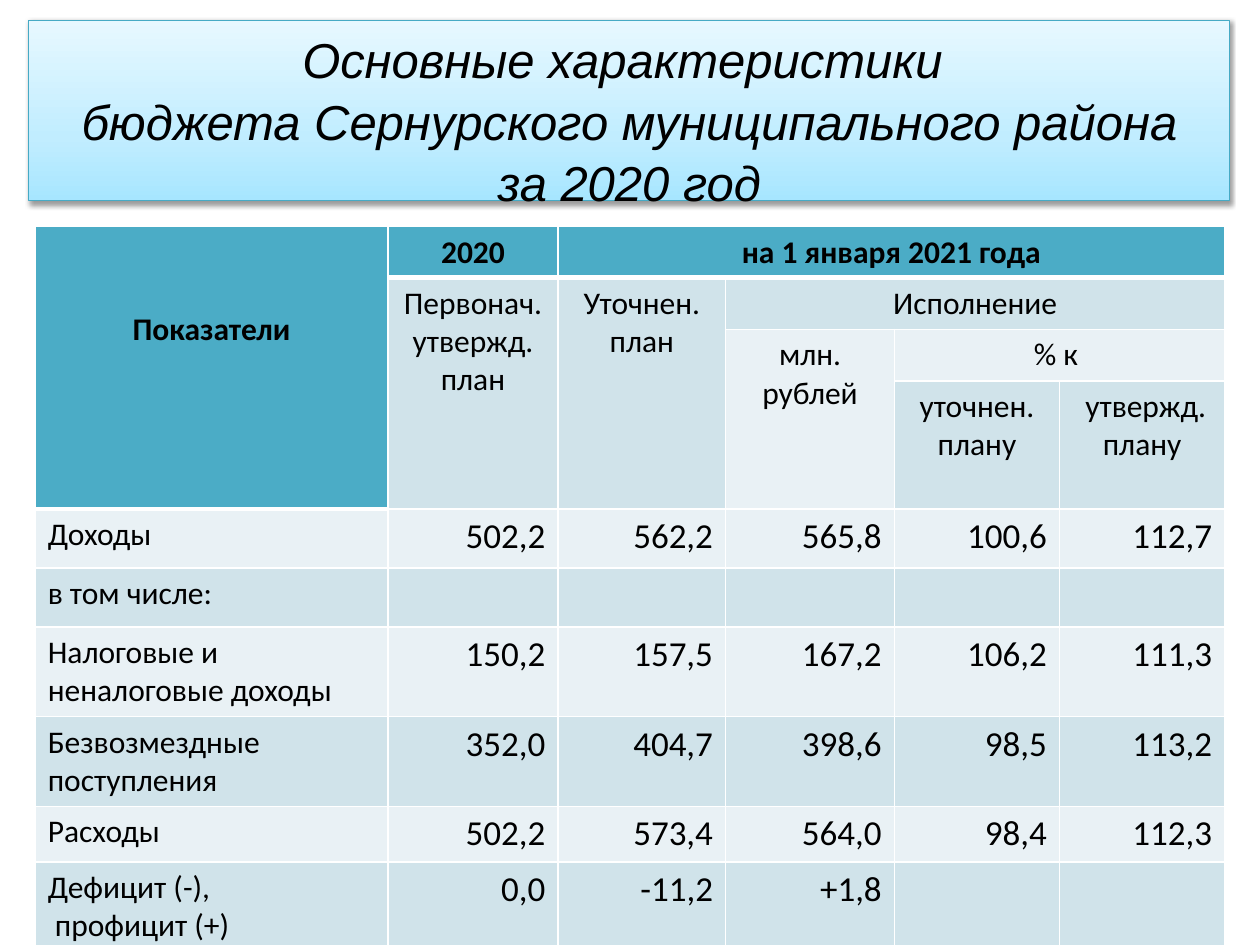
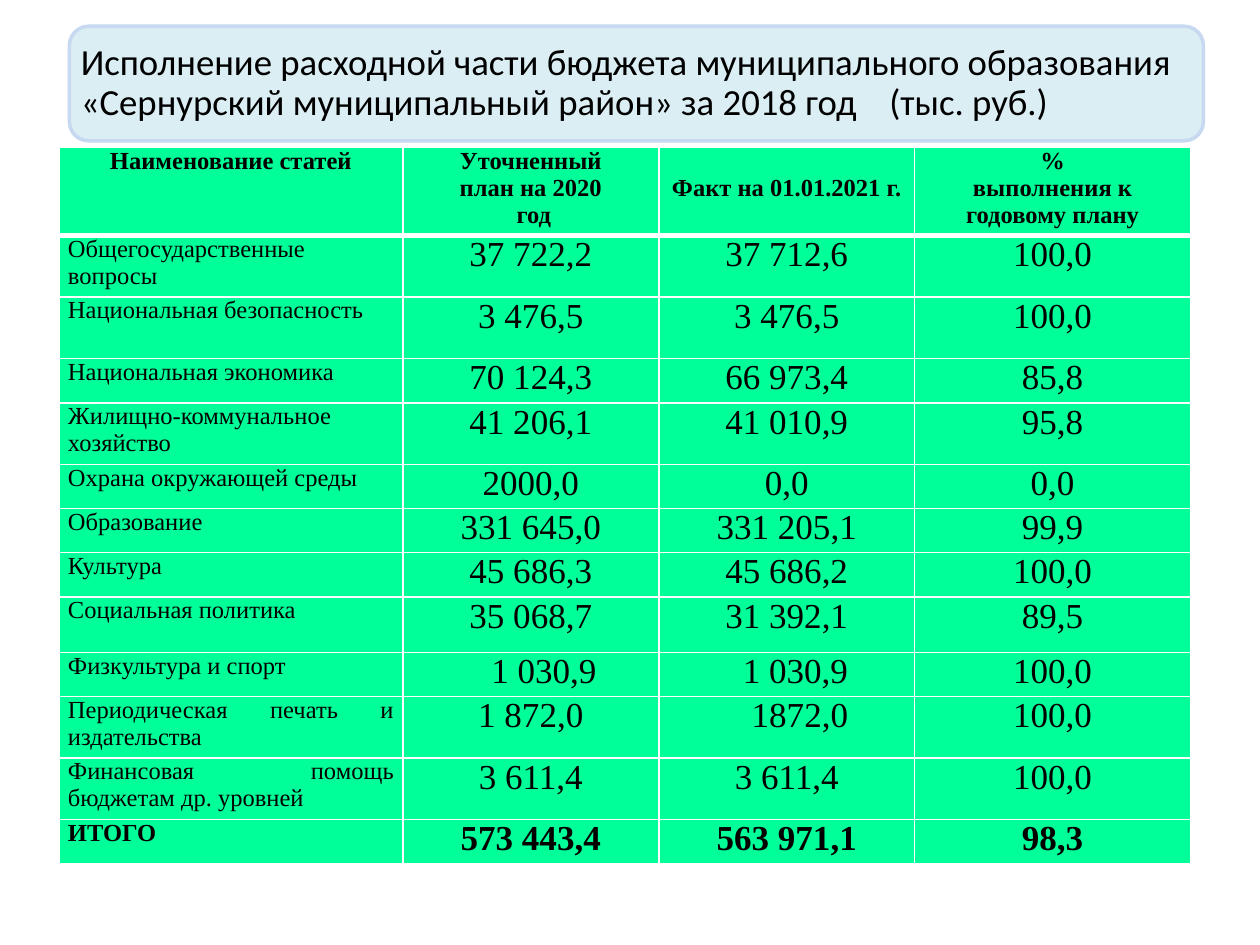
from pptx import Presentation
from pptx.dml.color import RGBColor
from pptx.enum import shapes, text
from pptx.oxml import parse_xml
from pptx.oxml.ns import nsdecls
from pptx.util import Cm, Pt

BLACK = RGBColor(0x00, 0x00, 0x00)
WHITE = RGBColor(0xFF, 0xFF, 0xFF)
TEAL = RGBColor(0x4B, 0xAC, 0xC6)
BAND_DARK = RGBColor(0xD0, 0xE3, 0xEA)
BAND_LIGHT = RGBColor(0xE9, 0xF1, 0xF5)
GREEN = RGBColor(0x00, 0xFF, 0x99)
TITLE_LINE = RGBColor(0x46, 0xAA, 0xC5)
TITLE_STOPS = ((0, RGBColor(0xA7, 0xE6, 0xFF)), (35, RGBColor(0xC1, 0xED, 0xFF)),
               (100, RGBColor(0xE7, 0xF8, 0xFF)))
PANEL = RGBColor(0xDB, 0xEE, 0xF4)
PANEL_LINE = RGBColor(0xC6, 0xD9, 0xF1)

LEFT, CENTER, RIGHT, JUSTIFY = (text.PP_ALIGN.LEFT, text.PP_ALIGN.CENTER,
                                text.PP_ALIGN.RIGHT, text.PP_ALIGN.JUSTIFY)

BUDGET_HEAD = {
    (0, 0): "Показатели", (0, 1): "2020", (0, 2): "на 1 января 2021 года",
    (1, 1): "Первонач. утвержд. план", (1, 2): "Уточнен.\nплан", (1, 3): "Исполнение",
    (2, 3): "млн. рублей", (2, 4): "% к ",
    (3, 4): "уточнен. плану", (3, 5): " утвержд. плану",
}
BUDGET_SPANS = [(0, 0, 3, 0), (0, 2, 0, 5), (1, 1, 3, 1), (1, 2, 3, 2),
                (1, 3, 1, 5), (2, 3, 3, 3), (2, 4, 2, 5)]
BUDGET_ROWS = [
    ("Доходы", "502,2", "562,2", "565,8", "100,6", "112,7"),
    ("в том числе:",),
    ("Налоговые и неналоговые доходы", "150,2", "157,5", "167,2", "106,2", "111,3"),
    ("Безвозмездные поступления", "352,0", "404,7", "398,6", "98,5", "113,2"),
    ("Расходы", "502,2", "573,4", "564,0", "98,4", "112,3"),
    ("Дефицит (-),\n профицит (+)", "0,0", "-11,2", "+1,8"),
]
EXPENSE_HEAD = ("Наименование статей", "Уточненный\nплан на 2020\n год",
                "Факт на 01.01.2021 г.", "%\nвыполнения к\nгодовому плану")
EXPENSE_ROWS = [
    ("Общегосударственные вопросы", "37 722,2", "37 712,6", "100,0"),
    ("Национальная безопасность", "3 476,5", "3 476,5", "100,0"),
    ("Национальная экономика", "70 124,3", "66 973,4", "85,8"),
    ("Жилищно-коммунальное хозяйство", "41 206,1", "41 010,9", "95,8"),
    ("Охрана окружающей среды", "2000,0", "0,0", "0,0"),
    ("Образование", "331 645,0", "331 205,1", "99,9"),
    ("Культура", "45 686,3", "45 686,2", "100,0"),
    ("Социальная политика", "35 068,7", "31 392,1", "89,5"),
    ("Физкультура и спорт", "1 030,9", "1 030,9", "100,0"),
    ("Периодическая печать и издательства", "1 872,0", "1872,0", "100,0"),
    ("Финансовая помощь бюджетам др. уровней", "3 611,4", "3 611,4", "100,0"),
    ("ИТОГО", "573 443,4", "563 971,1", "98,3"),
]


class Deck:
    """Holds the presentation, its style and the current slide."""

    def __init__(self):
        self.prs = Presentation()
        self.prs.slide_width, self.prs.slide_height = Cm(25.4), Cm(19.05)
        self.font = "Calibri"

    def slide(self, font):
        self.font = font
        self.s = self.prs.slides.add_slide(self.prs.slide_layouts[6])

    def put_text(self, tf, content, size, align=LEFT, bold=False, italic=False, font=None, spacing=None):
        tf.text = content
        for p in tf.paragraphs:
            p.alignment = align
            if spacing:
                p.line_spacing = spacing
            for r in p.runs:
                f = r.font
                f.name, f.size, f.bold, f.italic = font or self.font, Pt(size), bold, italic
                f.color.rgb = BLACK

    def shape(self, parent, kind, box, fill, line, width):
        sp = parent.add_shape(kind, *map(Cm, box))
        sp.shadow.inherit = False
        sp.fill.solid()
        sp.fill.fore_color.rgb = fill
        sp.line.color.rgb = line
        sp.line.width = Pt(width)
        return sp

    def gradient_title(self, box, content):
        sp = self.shape(self.s.shapes, shapes.MSO_SHAPE.RECTANGLE, box, PANEL, TITLE_LINE, 0.75)
        stops = "".join(f'<a:gs pos="{pos * 1000}"><a:srgbClr val="{c}"/></a:gs>'
                        for pos, c in TITLE_STOPS)
        pr = sp.element.spPr
        pr.replace(pr.find("{*}solidFill"), parse_xml(
            f'<a:gradFill {nsdecls("a")} rotWithShape="1"><a:gsLst>{stops}</a:gsLst>'
            '<a:lin ang="16200000" scaled="0"/></a:gradFill>'))
        pr.find("{*}effectLst").append(parse_xml(
            f'<a:outerShdw {nsdecls("a")} blurRad="{Pt(3.1)}" dist="{Pt(1.6)}" dir="5400000" '
            'rotWithShape="0"><a:srgbClr val="000000"><a:alpha val="38000"/></a:srgbClr></a:outerShdw>'))
        tf = sp.text_frame
        tf.word_wrap = False
        tf.vertical_anchor = text.MSO_ANCHOR.TOP
        self.put_text(tf, content, 28, CENTER, italic=True, font="Arial", spacing=1.05)

    def panel_title(self, box, content, tab):
        group = self.s.shapes.add_group_shape().shapes
        self.shape(group, shapes.MSO_SHAPE.ROUNDED_RECTANGLE, box, PANEL, PANEL_LINE, 2)
        tf = group.add_textbox(*map(Cm, box)).text_frame
        tf.word_wrap = True
        tf.vertical_anchor = text.MSO_ANCHOR.MIDDLE
        tf.margin_left = tf.margin_right = tf.margin_top = tf.margin_bottom = Cm(0.23)
        self.put_text(tf, content, 21, font="Calibri", spacing=0.9)
        for p in tf.paragraphs:
            p._p.get_or_add_pPr().append(parse_xml(
                f'<a:tabLst {nsdecls("a")}><a:tab pos="{Cm(tab)}" algn="l"/></a:tabLst>'))

    def table(self, left, top, widths, heights, fill_of, is_head):
        tbl = self.s.shapes.add_table(len(heights), len(widths), Cm(left), Cm(top),
                                      Cm(sum(widths)), Cm(sum(heights))).table
        for col, w in zip(tbl.columns, widths):
            col.width = Cm(w)
        for i, (row, h) in enumerate(zip(tbl.rows, heights)):
            row.height = Cm(h)
            for j, cell in enumerate(row.cells):
                cell.fill.solid()
                cell.fill.fore_color.rgb = fill_of(i, j)
                self.borders(cell, "LRTB" if i == 0 else "LRB", 3 if is_head(i, j) else 1)
        return tbl

    def borders(self, cell, sides, bottom):
        pr = cell._tc.get_or_add_tcPr()
        for k, side in enumerate(sides):
            width = Pt(bottom if side == "B" else 1)
            pr.insert(k, parse_xml(
                f'<a:ln{side} {nsdecls("a")} w="{width}"><a:solidFill>'
                f'<a:srgbClr val="{WHITE}"/></a:solidFill></a:ln{side}>'))


def budget_slide(deck):
    deck.slide("Calibri")

    def is_head(i, j):
        return i == 0 or (j == 0 and i < 4)

    def fill_of(i, j):
        return TEAL if is_head(i, j) else BAND_DARK if i % 2 else BAND_LIGHT

    tbl = deck.table(0.71, 4.57, [7.11, 3.43, 3.38, 3.4, 3.33, 3.33],
                     [0.91, 1.04, 1.04, 2.58, 1.19, 1.19, 1.55, 1.04, 0.99, 1.04],
                     fill_of, is_head)
    for top, left, bottom, right in BUDGET_SPANS:
        tbl.cell(top, left).merge(tbl.cell(bottom, right))
    for (i, j), content in BUDGET_HEAD.items():
        deck.put_text(tbl.cell(i, j).text_frame, content, 18, CENTER, bold=is_head(i, j))
    tbl.cell(0, 0).margin_top = Cm(1.68)
    for i, row in enumerate(BUDGET_ROWS, 4):
        for j, content in enumerate(row):
            deck.put_text(tbl.cell(i, j).text_frame, content, 20 if j else 18, RIGHT if j else LEFT)
    deck.gradient_title((0.58, 0.41, 24.21, 3.63),
                        "Основные характеристики \n"
                        "бюджета Сернурского муниципального района\nза 2020 год")


def expense_slide(deck):
    deck.slide("Times New Roman")
    deck.panel_title((1.4, 0.53, 22.86, 2.31),
                     "Исполнение расходной части бюджета муниципального образования "
                     "«Сернурский муниципальный район» за 2018 год\t(тыс. руб.)", 16.3)
    one, two = 0.89, 1.24
    tbl = deck.table(1.19, 2.97, [6.93, 5.16, 5.16, 5.56],
                     [1.68, two, two, one, two, one, one, one, 1.12, one, two, two, one],
                     lambda i, j: GREEN, lambda i, j: i == 0)
    for i, row in enumerate([EXPENSE_HEAD] + EXPENSE_ROWS):
        for j, content in enumerate(row):
            cell = tbl.cell(i, j)
            cell.margin_left = cell.margin_right = Cm(0.18)
            cell.margin_top = cell.margin_bottom = 0
            align = CENTER if i == 0 or j else JUSTIFY if i > 4 else LEFT
            deck.put_text(cell.text_frame, content, 20 if i and j else 14, align,
                          bold=i in (0, len(EXPENSE_ROWS)))
    tbl.cell(0, 2).margin_top = Cm(0.56)
    for i, j, shift in ((9, 1, 0.53), (9, 2, 0.35), (10, 2, 0.53)):
        tbl.cell(i, j).margin_left = Cm(0.18 + shift)


def main():
    deck = Deck()
    budget_slide(deck)
    expense_slide(deck)
    deck.prs.save("out.pptx")


if __name__ == "__main__":
    main()
